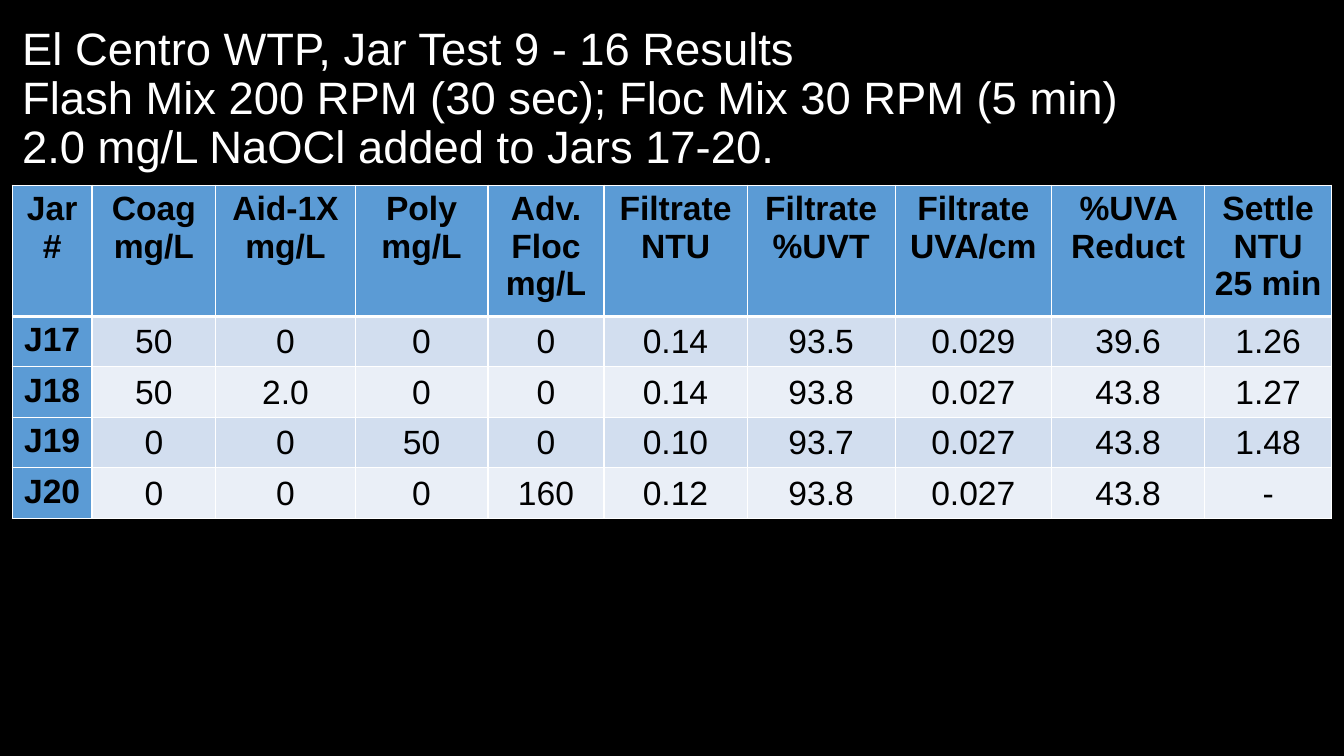
import pptx
import pptx.util
import pptx.dml.color
import pptx.enum.text
import lxml.etree

Cm, Pt = pptx.util.Cm, pptx.util.Pt
Rgb = pptx.dml.color.RGBColor.from_string
Align = pptx.enum.text.PP_ALIGN
Anchor = pptx.enum.text.MSO_ANCHOR

TITLE = [
    "El Centro WTP, Jar Test 9 - 16 Results",
    "Flash Mix 200 RPM (30 sec); Floc Mix 30 RPM (5 min)",
    "2.0 mg/L NaOCl added to Jars 17-20.",
]
HEADS = ["Jar#", "Coag\nmg/L", "Aid-1X\nmg/L", "Poly\nmg/L", "Adv.\nFloc\nmg/L",
         "Filtrate\nNTU", "Filtrate\n%UVT", "Filtrate\nUVA/cm", "%UVA Reduct",
         "Settle\nNTU\n25 min"]
JARS = [
    ["J17", "50", "0", "0", "0", "0.14", "93.5", "0.029", "39.6", "1.26"],
    ["J18", "50", "2.0", "0", "0", "0.14", "93.8", "0.027", "43.8", "1.27"],
    ["J19", "0", "0", "50", "0", "0.10", "93.7", "0.027", "43.8", "1.48"],
    ["J20", "0", "0", "0", "160", "0.12", "93.8", "0.027", "43.8", "-"],
]
WIDTHS = [2.01, 3.12, 3.51, 3.35, 2.92, 3.61, 3.73, 3.94, 3.86, 3.2]
ROW_H, FRAME_H = 1.04, 8.38
LEFT, TOP = 0.31, 4.67

COLORS = {"back": "000000", "title": "FFFFFF", "text": "000000", "line": "FFFFFF",
          "head": "5B9BD5", "odd": "D2DEEF", "even": "EAEFF7"}
TITLE_FONT = {"name": "Arial", "size": Pt(32.4), "bold": False}
CELL_FONT = {"name": "Arial", "size": Pt(24)}
VALUE_CELL = {"vertical_anchor": Anchor.MIDDLE, "margin_left": Cm(0.03),
              "margin_right": Cm(0.03), "margin_top": Cm(0.03), "margin_bottom": 0}


def apply(item, form):
    for key, value in form.items():
        setattr(item, key, value)


def border(cell, row):
    """Draw white sides, with a thick rule under the header row."""
    props = cell._tc.get_or_add_tcPr()
    space = props.nsmap["a"]
    thick = {("lnB", 0), ("lnT", 1)}
    for side in ("lnL", "lnR", "lnT", "lnB"):
        width = Pt(3 if (side, row) in thick else 1)
        line = lxml.etree.SubElement(props, f"{{{space}}}{side}", w=str(width))
        fill = lxml.etree.SubElement(line, f"{{{space}}}solidFill")
        lxml.etree.SubElement(fill, f"{{{space}}}srgbClr", val=COLORS["line"])


def add_title(slide):
    box = slide.shapes.add_textbox(Cm(LEFT), Cm(0.34), Cm(33.1), Cm(4.34))
    frame = box.text_frame
    apply(frame, {"word_wrap": True, "vertical_anchor": Anchor.MIDDLE})
    para = frame.paragraphs[0]
    para.text = "\v".join(TITLE)
    para.line_spacing = 0.9
    for run in para.runs:
        apply(run.font, TITLE_FONT)
        run.font.color.rgb = Rgb(COLORS["title"])


def fill_cell(cell, text, row, col):
    label = row == 0 or col == 0
    border(cell, row)
    cell.fill.solid()
    shade = "head" if label else "odd" if row % 2 else "even"
    cell.fill.fore_color.rgb = Rgb(COLORS[shade])
    if not label:
        apply(cell, VALUE_CELL)
    cell.text = text
    for para in cell.text_frame.paragraphs:
        para.alignment = Align.CENTER
        for run in para.runs:
            apply(run.font, CELL_FONT)
            run.font.bold = label
            run.font.color.rgb = Rgb(COLORS["text"])


def add_results(slide):
    """Add the table; its rows grow to fit their text."""
    rows = [HEADS] + JARS
    frame = slide.shapes.add_table(len(rows), len(HEADS), Cm(LEFT), Cm(TOP),
                                   Cm(sum(WIDTHS)), Cm(ROW_H * len(rows)))
    table = frame.table
    table.first_col = True
    for col, width in zip(table.columns, WIDTHS):
        col.width = Cm(width)
    for r, texts in enumerate(rows):
        for c, text in enumerate(texts):
            fill_cell(table.cell(r, c), text, r, c)
    frame.height = Cm(FRAME_H)


def main():
    deck = pptx.Presentation()
    apply(deck, {"slide_width": Cm(33.87), "slide_height": Cm(19.05)})
    slide = deck.slides.add_slide(deck.slide_layouts[6])
    slide.background.fill.solid()
    slide.background.fill.fore_color.rgb = Rgb(COLORS["back"])
    add_title(slide)
    add_results(slide)
    deck.save("out.pptx")


if __name__ == "__main__":
    main()
